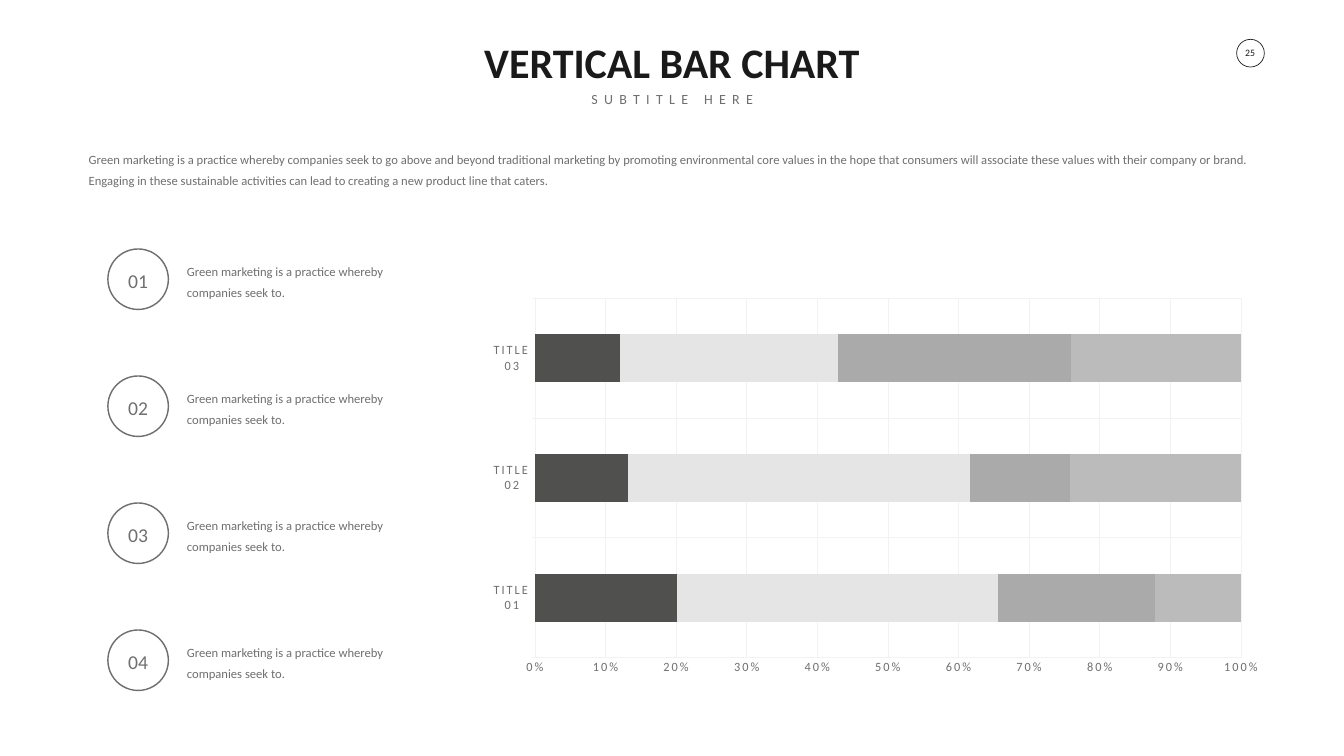
from dataclasses import dataclass

from lxml import etree
from pptx import Presentation
from pptx.chart.data import CategoryChartData
from pptx.dml.color import RGBColor
from pptx.enum.chart import XL_CHART_TYPE, XL_TICK_MARK
from pptx.enum.shapes import MSO_SHAPE
from pptx.enum.text import MSO_ANCHOR, MSO_AUTO_SIZE, PP_ALIGN
from pptx.oxml import parse_xml
from pptx.oxml.ns import nsdecls
from pptx.util import Inches, Pt

BAR = XL_CHART_TYPE.BAR_STACKED_100
TICK_OUT, TICK_NONE = XL_TICK_MARK.OUTSIDE, XL_TICK_MARK.NONE
OVAL = MSO_SHAPE.OVAL
TOP, MIDDLE = MSO_ANCHOR.TOP, MSO_ANCHOR.MIDDLE
LEFT, CENTER = PP_ALIGN.LEFT, PP_ALIGN.CENTER
GROW = MSO_AUTO_SIZE.SHAPE_TO_FIT_TEXT


@dataclass(frozen=True)
class Theme:
    font: str = "Calibri"
    dark: RGBColor = RGBColor(0x1A, 0x1A, 0x1A)
    gray: RGBColor = RGBColor(0x6F, 0x6F, 0x6F)
    grid: RGBColor = RGBColor(0xF2, 0xF2, 0xF2)
    white: RGBColor = RGBColor(0xFF, 0xFF, 0xFF)
    bars: tuple = ("50514F", "E5E5E5", "AAAAAA", "BBBBBB")
    title: int = 60
    number: int = 28
    subtitle: int = 20
    body: int = 18
    page: int = 14


theme = Theme()
deck = Presentation()
deck.slide_width, deck.slide_height = Inches(26.66), Inches(15)
slide = deck.slides.add_slide(deck.slide_layouts[6])


def add_text(text, x, y, w, h, size=theme.body, color=theme.gray, bold=False,
             align=LEFT, anchor=TOP, wrap=False, lead=None, track=0):
    """Add a text box; lead is line spacing and track letter spacing, in points."""
    box = slide.shapes.add_textbox(Inches(x), Inches(y), Inches(w), Inches(h))
    frame = box.text_frame
    frame.word_wrap, frame.auto_size = wrap, GROW
    frame.vertical_anchor = anchor
    para = frame.paragraphs[0]
    para.alignment = align
    if lead:
        para.line_spacing = Pt(lead)
    run = para.add_run()
    run.text = text
    font = run.font
    font.name, font.size, font.bold = theme.font, Pt(size), bold
    font.color.rgb = color
    if track:
        font._element.set("spc", str(track * 100))


def add_ring(x, y, size, color, width, fill=None):
    ring = slide.shapes.add_shape(OVAL, Inches(x), Inches(y), Inches(size), Inches(size))
    ring.shadow.inherit = False
    if fill is None:
        ring.fill.background()
    else:
        ring.fill.solid()
        ring.fill.fore_color.rgb = fill
    ring.line.color.rgb, ring.line.width = color, Pt(width)


# Page number
add_text("25", 24.6, 0.88, 0.4, 0.34, size=theme.page, color=theme.dark,
         align=CENTER, anchor=MIDDLE)
add_ring(24.53, 0.78, 0.55, theme.dark, 1)

# Introduction
add_text("Green marketing is a practice whereby companies seek to go above and beyond "
         "traditional marketing by promoting environmental core values in the hope that "
         "consumers will associate these values with their company or brand. Engaging in "
         "these sustainable activities can lead to creating a new product line that caters.",
         1.66, 2.84, 23.33, 0.91, wrap=True, lead=30)

# Chart
data = CategoryChartData()
data.categories = ["TITLE 01", "TITLE 02", "TITLE 03"]
rows = [(20, 13, 12), (45, 48, 31), (22, 14, 33), (12, 24, 24)]
for i, row in enumerate(rows, 1):
    data.add_series(f"Series {i}", row)
chart = slide.shapes.add_chart(BAR, Inches(9.79), Inches(5.64), Inches(15.16),
                               Inches(8.05), data).chart
chart.has_legend = chart.has_title = False
chart.font.name, chart.font.size = theme.font, Pt(theme.body)
chart.font.color.rgb = theme.gray

plot = chart.plots[0]
plot.gap_width, plot.overlap = 150, 100
plot.vary_by_categories = False
for series, shade in zip(plot.series, theme.bars):
    series.format.fill.solid()
    series.format.fill.fore_color.rgb = RGBColor.from_string(shade)

for axis, tick in ((chart.category_axis, TICK_OUT), (chart.value_axis, TICK_NONE)):
    axis.has_major_gridlines = True
    axis.major_tick_mark, axis.minor_tick_mark = tick, TICK_NONE
    for line in (axis.format.line, axis.major_gridlines.format.line):
        line.color.rgb, line.width = theme.grid, Pt(0.75)
    font = axis.tick_labels.font
    font.name, font.size = theme.font, Pt(theme.body)
    font.color.rgb = theme.gray
    font._element.set("spc", "300")
scale = chart.value_axis
scale.minimum_scale, scale.maximum_scale, scale.major_unit = 0, 1, 0.1
scale.tick_labels.number_format = "0%"
scale.tick_labels.number_format_is_linked = False

# Fixed inner plot area, as shares of the chart frame
area = chart._chartSpace.chart.plotArea
for old in area.findall("{*}layout"):
    area.remove(old)
layout = parse_xml(f"<c:layout {nsdecls('c')}><c:manualLayout/></c:layout>")
for tag, val in (("layoutTarget", "inner"), ("xMode", "edge"), ("yMode", "edge"),
                 ("x", "0.051"), ("y", "0.034"), ("w", "0.949"), ("h", "0.886")):
    name = etree.QName(layout.nsmap["c"], tag)
    etree.SubElement(layout[0], name).set("val", val)
area.insert(0, layout)

# Numbered points
for i in range(4):
    y = 4.94 + 2.52 * i
    add_ring(2.14, y, 1.2, theme.gray, 2, fill=theme.white)
    add_text(f"{i + 1:02}", 2.42, y + 0.34, 0.64, 0.57, size=theme.number,
             align=CENTER, anchor=MIDDLE)
    add_text("Green marketing is a practice whereby companies seek to.",
             3.61, y + 0.14, 4.67, 0.91, anchor=MIDDLE, wrap=True, lead=30)

# Heading
add_text("VERTICAL BAR CHART", 8.85, 0.68, 8.96, 1.11, size=theme.title,
         color=theme.dark, bold=True, align=CENTER)
add_text("SUBTITLE HERE", 11.39, 1.74, 3.89, 0.44, size=theme.subtitle,
         align=CENTER, track=9)

deck.save("out.pptx")
